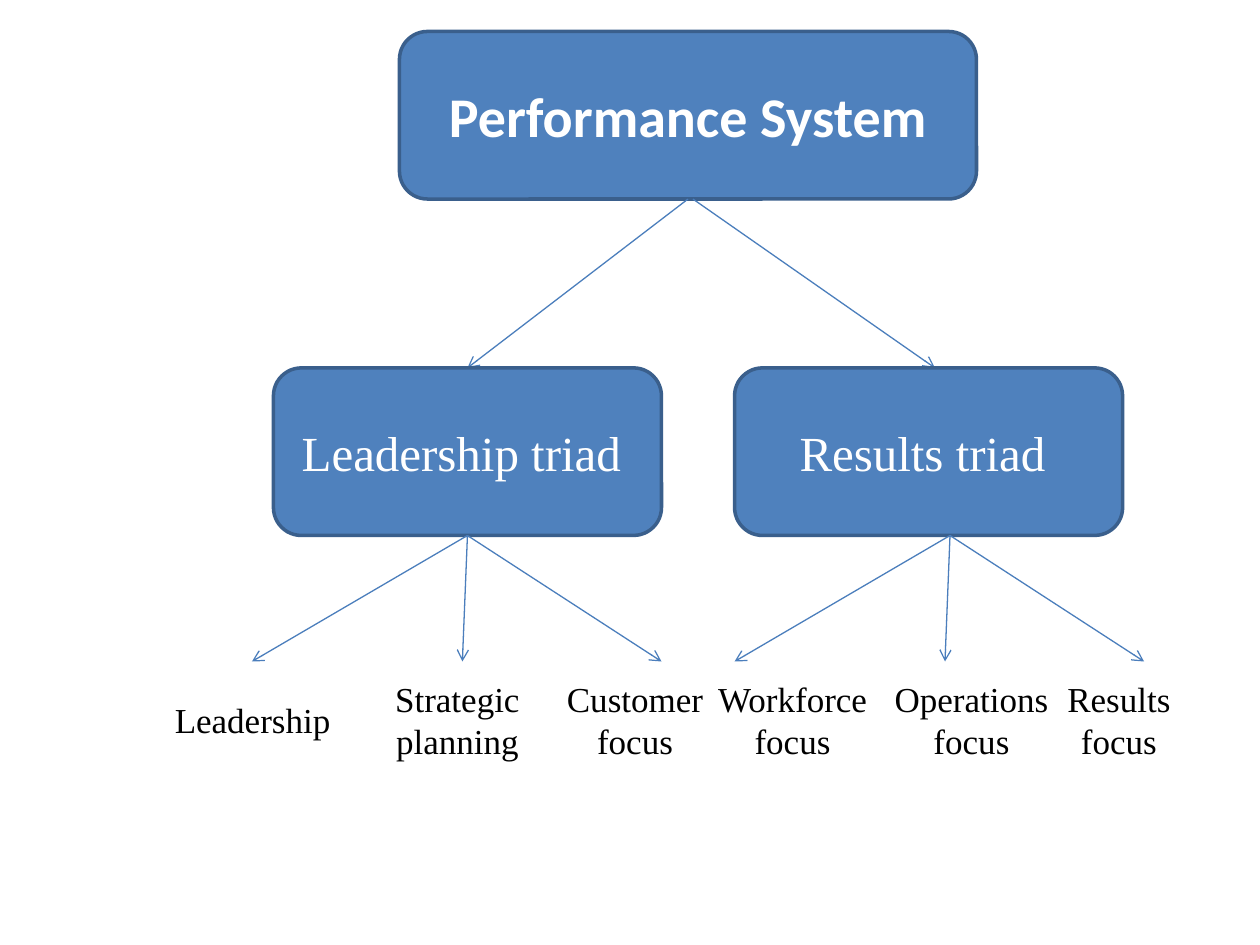
import pptx
import pptx.dml.color
import pptx.enum.shapes
import pptx.enum.text
import pptx.oxml.ns
import pptx.util
from lxml import etree
from pptx.util import Inches

COLORS = {"box": "4F81BD", "border": "3A5F8C", "arrow": "4B7EBC",
          "box_text": "FFFFFF", "label": "000000"}
SERIF = "Times New Roman"
BOX_HEIGHT = 1.33
TRIAD_TOP = 2.92
LABEL_TOP = 5.25
LABEL_HEIGHT = 0.92

SYSTEM = {"text": "Performance System", "left": 3.17, "top": 0.25, "width": 4.58}
TRIADS = [
    {"text": "Leadership triad ", "left": 2.17, "branch": 5.46, "entry": 3.71, "hub": 3.71},
    {"text": "Results triad ", "left": 5.83, "branch": 5.5, "entry": 7.42, "hub": 7.54},
]
TRIAD_WIDTH = 3.08
FAN_OFFSETS = [-1.71, 1.54, -0.04]
CATEGORIES = [
    (["Leadership "], 1.25, 1.58),
    (["Strategic planning"], 2.92, 1.42),
    (["Customer focus"], 4.33, 1.42),
    (["Workforce focus"], 5.58, 1.42),
    (["Operations", "focus"], 6.92, 1.58),
    (["Results focus"], 8.17, 1.42),
]


def rgb(name):
    return pptx.dml.color.RGBColor.from_string(COLORS[name])


def write(shape, lines, size, font, color, bold=False):
    frame = shape.text_frame
    frame.word_wrap = True
    frame.vertical_anchor = pptx.enum.text.MSO_ANCHOR.MIDDLE
    frame.text = "\n".join(lines)
    for paragraph in frame.paragraphs:
        paragraph.alignment = pptx.enum.text.PP_ALIGN.CENTER
        paragraph.font.size = pptx.util.Pt(size)
        paragraph.font.name = font
        paragraph.font.bold = bold
        paragraph.font.color.rgb = rgb(color)


def add_box(slide, text, left, top, width, size, font, bold=False):
    box = slide.shapes.add_shape(
        pptx.enum.shapes.MSO_SHAPE.ROUNDED_RECTANGLE,
        Inches(left), Inches(top), Inches(width), Inches(BOX_HEIGHT))
    box.shadow.inherit = False
    box.fill.solid()
    box.fill.fore_color.rgb = rgb("box")
    box.line.color.rgb = rgb("border")
    box.line.width = pptx.util.Pt(2)
    write(box, [text], size, font, "box_text", bold)


def add_arrow(slide, x1, y1, x2, y2):
    arrow = slide.shapes.add_connector(
        pptx.enum.shapes.MSO_CONNECTOR.STRAIGHT,
        Inches(x1), Inches(y1), Inches(x2), Inches(y2))
    arrow.line.color.rgb = rgb("arrow")
    arrow.line.width = pptx.util.Pt(0.75)
    qn = pptx.oxml.ns.qn
    etree.SubElement(arrow.line._get_or_add_ln(), qn("a:tailEnd"), type="arrow")
    etree.SubElement(arrow._element.spPr, qn("a:effectLst"))


def main():
    deck = pptx.Presentation()
    deck.slide_width, deck.slide_height = Inches(10), Inches(7.5)
    slide = deck.slides.add_slide(deck.slide_layouts[6])

    add_box(slide, **SYSTEM, size=32, font="Calibri", bold=True)
    for triad in TRIADS:
        add_arrow(slide, triad["branch"], SYSTEM["top"] + BOX_HEIGHT,
                  triad["entry"], TRIAD_TOP)
    for triad in TRIADS:
        add_box(slide, triad["text"], triad["left"], TRIAD_TOP, TRIAD_WIDTH, 28, SERIF)
        for offset in FAN_OFFSETS:
            add_arrow(slide, triad["hub"], TRIAD_TOP + BOX_HEIGHT,
                      triad["hub"] + offset, LABEL_TOP)
    for lines, left, width in CATEGORIES:
        label = slide.shapes.add_textbox(
            Inches(left), Inches(LABEL_TOP), Inches(width), Inches(LABEL_HEIGHT))
        write(label, lines, 20, SERIF, "label")

    deck.save("out.pptx")


if __name__ == "__main__":
    main()
